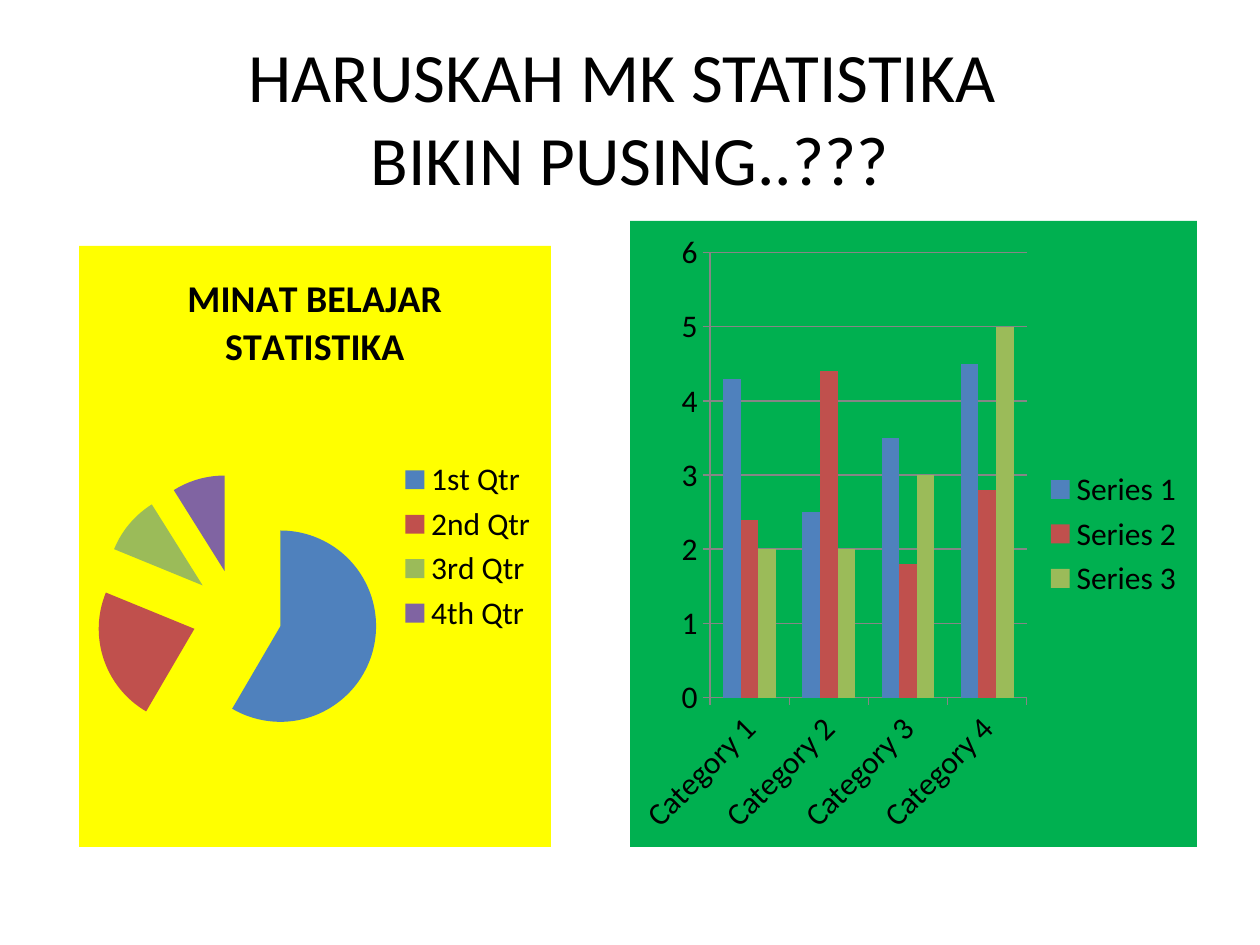
from dataclasses import dataclass

from lxml import etree
from pptx import Presentation
from pptx.chart.data import CategoryChartData
from pptx.dml.color import RGBColor
from pptx.enum.chart import XL_CHART_TYPE, XL_LEGEND_POSITION, XL_TICK_MARK
from pptx.enum.text import MSO_ANCHOR, PP_ALIGN
from pptx.oxml import parse_xml
from pptx.oxml.ns import nsdecls, qn
from pptx.util import Emu, Pt

COLUMN = XL_CHART_TYPE.COLUMN_CLUSTERED
PIE = XL_CHART_TYPE.PIE
RIGHT = XL_LEGEND_POSITION.RIGHT
OUTSIDE = XL_TICK_MARK.OUTSIDE
MIDDLE = MSO_ANCHOR.MIDDLE
CENTER = PP_ALIGN.CENTER
PX_PER_INCH = 126


@dataclass(frozen=True)
class Theme:
    font: str = "Calibri"
    text: str = "000000"
    axis: str = "868686"
    green: str = "00B050"
    yellow: str = "FFFF00"
    accents: tuple = ("4F81BD", "C0504D", "9BBB59", "8064A2")
    title_size: float = 39.6
    chart_title_size: float = 21.6
    chart_size: int = 18


THEME = Theme()


def px(n):
    return Emu(round(n * 914400 / PX_PER_INCH))


def set_font(font, size, bold=False):
    font.name = THEME.font
    font.size = Pt(size)
    font.bold = bold
    font.color.rgb = RGBColor.from_string(THEME.text)


def paint(fill, color):
    fill.solid()
    fill.fore_color.rgb = RGBColor.from_string(color)


def add_title(slide, lines, box):
    sp = slide.shapes.add_textbox(*map(px, box))
    tf = sp.text_frame
    tf.word_wrap = True
    tf.vertical_anchor = MIDDLE
    p = tf.paragraphs[0]
    p.alignment = CENTER
    for i, line in enumerate(lines):
        if i:
            p.add_line_break()
        r = p.add_run()
        r.text = line
        set_font(r.font, THEME.title_size)


def fill_chart_area(chart, color):
    area = parse_xml(
        f'<c:spPr {nsdecls("c", "a")}><a:solidFill><a:srgbClr val="{color}"/>'
        "</a:solidFill><a:ln><a:noFill/></a:ln></c:spPr>"
    )
    chart.element.find(qn("c:chart")).addnext(area)


def add_chart(slide, kind, categories, series, box, background):
    data = CategoryChartData()
    data.categories = categories
    for name, values in series.items():
        data.add_series(name, values)
    chart = slide.shapes.add_chart(kind, *map(px, box), data).chart
    set_font(chart.font, THEME.chart_size)
    fill_chart_area(chart, background)
    chart.has_title = False
    chart.has_legend = True
    chart.legend.position = RIGHT
    chart.legend.include_in_layout = False
    return chart


def style_columns(chart):
    plot = chart.plots[0]
    plot.vary_by_categories = False
    plot.gap_width = 150
    for series, color in zip(plot.series, THEME.accents):
        paint(series.format.fill, color)
    value_axis = chart.value_axis
    value_axis.has_major_gridlines = True
    value_axis.minimum_scale = 0
    value_axis.maximum_scale = 6
    value_axis.major_unit = 1
    lines = [value_axis.major_gridlines.format.line]
    for axis in (chart.category_axis, value_axis):
        axis.major_tick_mark = OUTSIDE
        lines.append(axis.format.line)
    for line in lines:
        line.color.rgb = RGBColor.from_string(THEME.axis)
        line.width = Pt(0.75)


def style_pie(chart, title, explosion):
    chart.has_title = True
    p = chart.chart_title.text_frame.paragraphs[0]
    r = p.add_run()
    r.text = title
    set_font(r.font, THEME.chart_title_size, bold=True)
    chart.chart_title.include_in_layout = False
    plot = chart.plots[0]
    plot.vary_by_categories = True
    series = plot.series[0]
    for i, color in enumerate(THEME.accents):
        paint(series.points[i].format.fill, color)
    offset = etree.Element(qn("c:explosion"), val=str(explosion))
    series._element.find(qn("c:dPt")).addprevious(offset)


def main():
    prs = Presentation()
    prs.slide_width, prs.slide_height = px(1260), px(945)
    slide = prs.slides.add_slide(prs.slide_layouts[6])

    add_title(slide, ["HARUSKAH MK STATISTIKA ", "BIKIN PUSING..???"], (63, 38, 1134, 157))

    columns = add_chart(
        slide,
        COLUMN,
        [f"Category {n}" for n in range(1, 5)],
        {
            "Series 1": (4.3, 2.5, 3.5, 4.5),
            "Series 2": (2.4, 4.4, 1.8, 2.8),
            "Series 3": (2, 2, 3, 5),
        },
        (630, 221, 567, 626),
        THEME.green,
    )
    style_columns(columns)

    pie = add_chart(
        slide,
        PIE,
        ["1st Qtr", "2nd Qtr", "3rd Qtr", "4th Qtr"],
        {"Series 1": (59, 23, 10, 9)},
        (79, 246, 472, 601),
        THEME.yellow,
    )
    style_pie(pie, "MINAT BELAJAR STATISTIKA", 47)

    prs.save("out.pptx")


if __name__ == "__main__":
    main()
